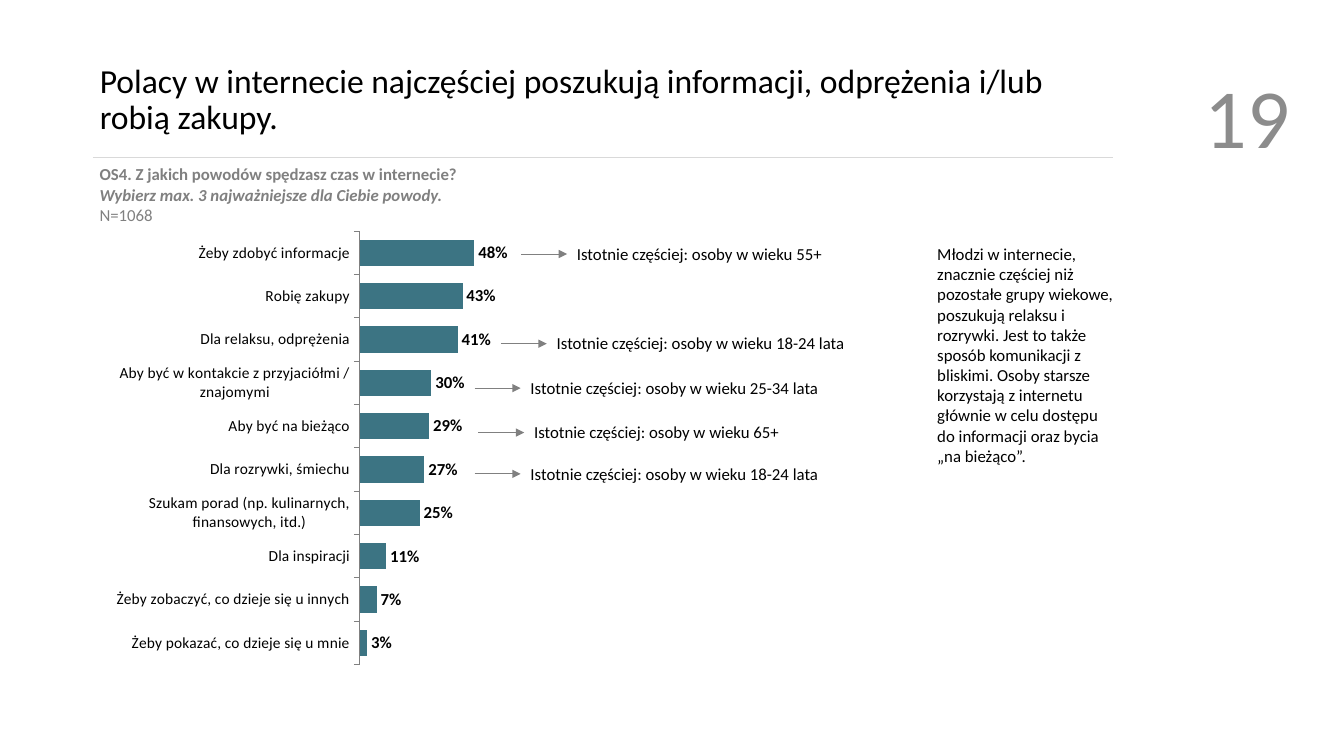
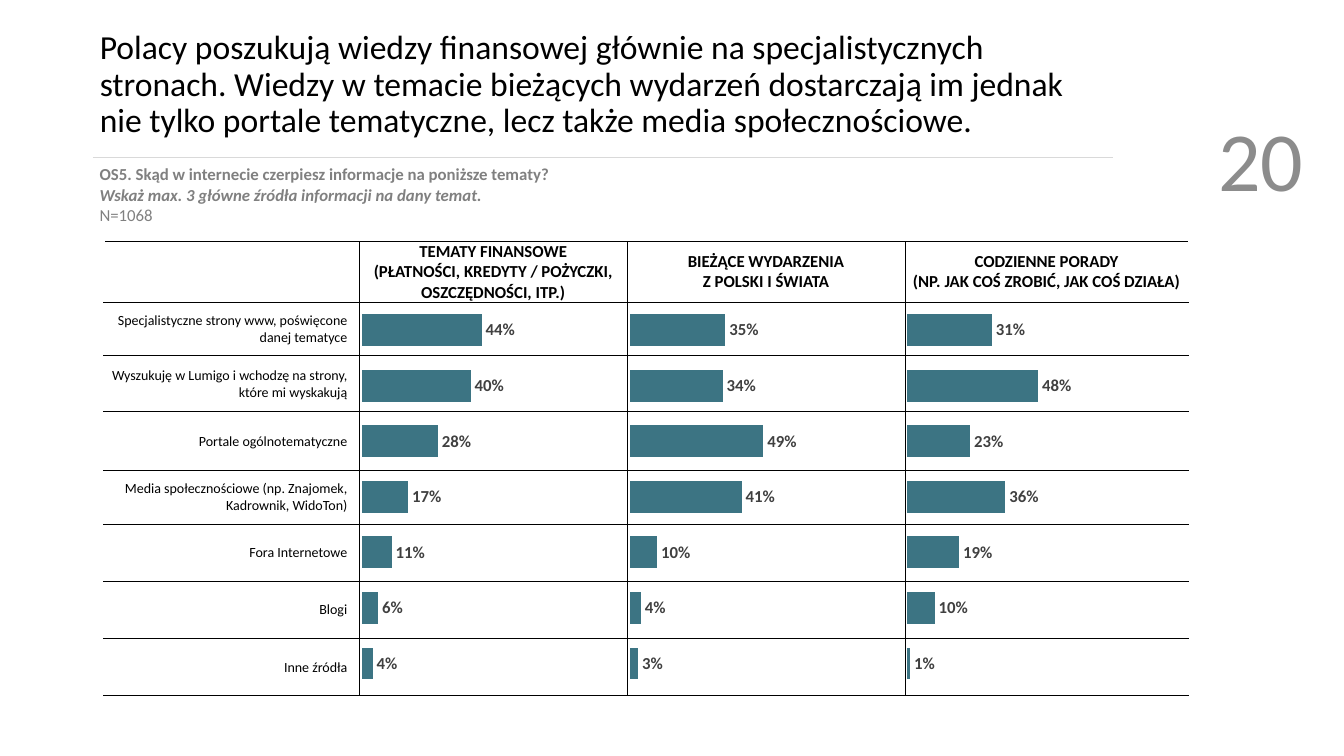
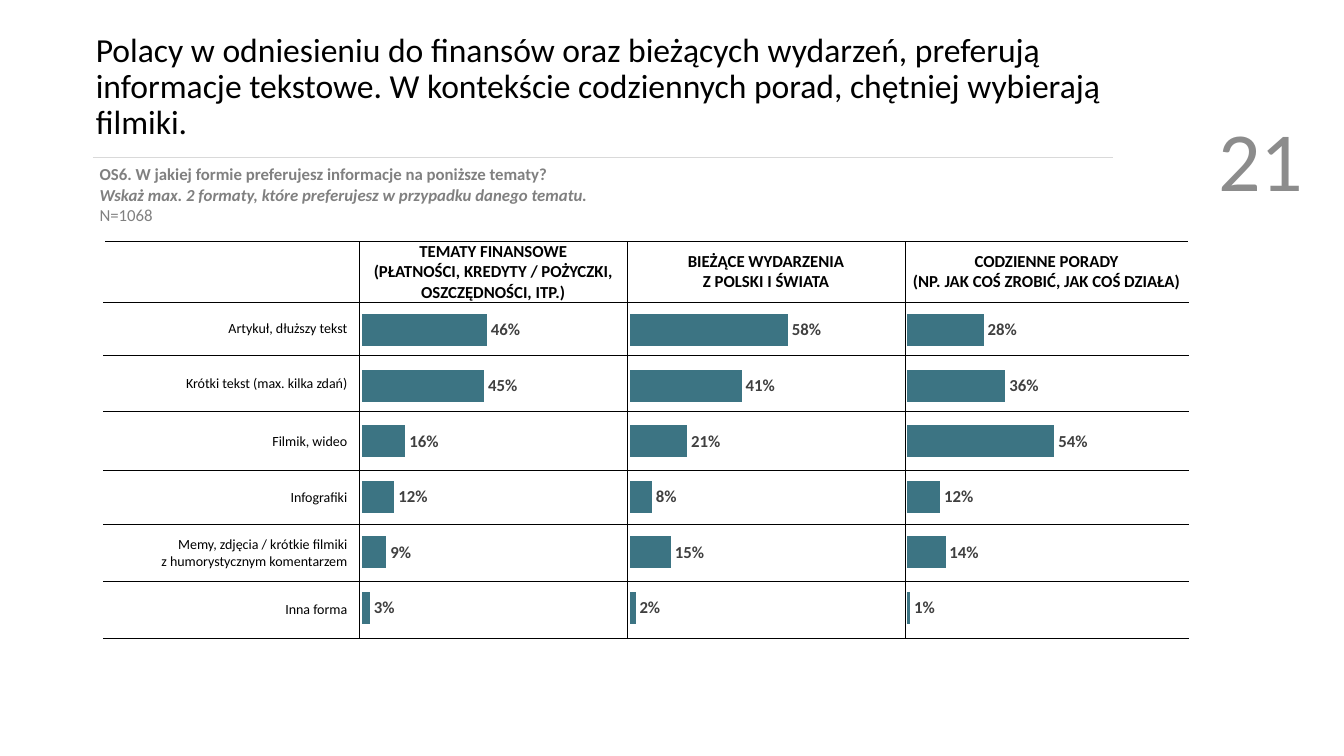
from itertools import accumulate

from pptx import Presentation
from pptx.chart.data import CategoryChartData
from pptx.dml.color import RGBColor
from pptx.enum.chart import XL_CHART_TYPE, XL_LABEL_POSITION, XL_TICK_MARK
from pptx.enum.shapes import MSO_CONNECTOR, MSO_SHAPE
from pptx.enum.text import MSO_ANCHOR, MSO_AUTO_SIZE, PP_ALIGN
from pptx.oxml import parse_xml
from pptx.oxml.ns import nsdecls
from pptx.util import Cm, Pt

FONT = "Calibri"
COLORS = {
    "text": "000000",
    "muted": "808080",
    "number": "8C8C8C",
    "rule": "D9D9D9",
    "bar": "3C7483",
    "label": "404040",
    "white": "FFFFFF",
}
COLUMN_WIDTHS = [6.43, 6.76, 6.99, 7.15]
ROW_HEIGHTS = [1.53, 1.34, 1.42, 1.47, 1.36, 1.44, 1.44, 1.44]
TABLE_LEFT, TABLE_TOP = 2.62, 6.08
CHART_ROW = 1.4
TOPICS = [
    "TEMATY FINANSOWE\n(PŁATNOŚCI, KREDYTY / POŻYCZKI, OSZCZĘDNOŚCI, ITP.)",
    "BIEŻĄCE WYDARZENIA\nZ POLSKI I ŚWIATA",
    "CODZIENNE PORADY\n(NP. JAK COŚ ZROBIĆ, JAK COŚ DZIAŁA)",
]
REASONS = {
    "Żeby zdobyć informacje": 0.48,
    "Robię zakupy": 0.43,
    "Dla relaksu, odprężenia": 0.41,
    "Aby być w kontakcie z przyjaciółmi / znajomymi": 0.3,
    "Aby być na bieżąco": 0.29,
    "Dla rozrywki, śmiechu": 0.27,
    "Szukam porad (np. kulinarnych, finansowych, itd.)": 0.25,
    "Dla inspiracji": 0.11,
    "Żeby zobaczyć, co dzieje się u innych": 0.07,
    "Żeby pokazać, co dzieje się u mnie": 0.03,
}
AGE_NOTES = [
    (13.13, 6.4, "55+"),
    (12.62, 8.66, "18-24 lata"),
    (11.96, 9.78, "25-34 lata"),
    (12.05, 10.9, "65+"),
    (11.96, 11.94, "18-24 lata"),
]
COMMENT = (
    "Młodzi w internecie, znacznie częściej niż pozostałe grupy wiekowe, poszukują "
    "relaksu i rozrywki. Jest to także sposób komunikacji z bliskimi. Osoby starsze "
    "korzystają z internetu głównie w celu dostępu do informacji oraz bycia „na bieżąco”."
)
SOURCES = {
    "Specjalistyczne strony www, poświęcone danej tematyce": (0.44, 0.35, 0.31),
    "Wyszukuję w Lumigo i wchodzę na strony, które mi wyskakują": (0.4, 0.34, 0.48),
    "Portale ogólnotematyczne": (0.28, 0.49, 0.23),
    "Media społecznościowe (np. Znajomek, Kadrownik, WidoTon)": (0.17, 0.41, 0.36),
    "Fora Internetowe": (0.11, 0.1, 0.19),
    "Blogi": (0.06, 0.04, 0.1),
    "Inne źródła": (0.04, 0.03, 0.01),
}
FORMATS = {
    "Artykuł, dłuższy tekst": (0.46, 0.58, 0.28),
    "Krótki tekst (max. kilka zdań)": (0.45, 0.41, 0.36),
    "Filmik, wideo": (0.16, 0.21, 0.54),
    "Infografiki": (0.12, 0.08, 0.12),
    "Memy, zdjęcia / krótkie filmiki\nz humorystycznym komentarzem": (0.09, 0.15, 0.14),
    "Inna forma": (0.03, 0.02, 0.01),
}


def color(name):
    return RGBColor.from_string(COLORS[name])


def cm_box(box):
    return [Cm(length) for length in box]


def write(frame, text, size=12, ink="text", bold=False, italic=False, styles=(),
          align=PP_ALIGN.LEFT, spacing=None):
    para = frame.paragraphs[0]
    para.alignment = align
    para.line_spacing = spacing
    for index, line in enumerate(text.split("\n")):
        if index:
            para.add_line_break()
        span = para.add_run()
        span.text = line
        font = span.font
        font.name, font.size = FONT, Pt(size)
        font.color.rgb = color(ink)
        font.bold, font.italic = styles[index] if styles else (bold, italic)


def add_text(page, box, text, anchor=MSO_ANCHOR.TOP, **formats):
    frame = page.shapes.add_textbox(*cm_box(box)).text_frame
    frame.word_wrap = True
    frame.vertical_anchor = anchor
    write(frame, text, **formats)


def add_line(page, start, end, ink, width, arrow=False):
    line = page.shapes.add_connector(
        MSO_CONNECTOR.STRAIGHT, *cm_box(start), *cm_box(end))
    line.line.color.rgb = color(ink)
    line.line.width = Pt(width)
    if arrow:
        line.line._get_or_add_ln().append(
            parse_xml(f'<a:tailEnd {nsdecls("a")} type="triangle"/>'))
    line._element.spPr.append(parse_xml(f'<a:effectLst {nsdecls("a")}/>'))


def add_page(deck, title, title_box, number, number_box, question):
    page = deck.slides.add_slide(deck.slide_layouts[5])
    add_line(page, (2.34, 3.97), (28.04, 3.97), "rule", 0.75)
    heading = page.shapes.title
    heading.left, heading.top, heading.width, heading.height = cm_box(title_box)
    frame = heading.text_frame
    frame.auto_size = MSO_AUTO_SIZE.NONE
    frame.word_wrap = True
    frame.vertical_anchor = MSO_ANCHOR.MIDDLE
    write(frame, title, size=24, spacing=0.9)
    add_text(page, number_box, number, MSO_ANCHOR.MIDDLE,
             size=60, ink="number", align=PP_ALIGN.RIGHT)
    add_text(page, (2.26, 4.01, 23.27, 1.8), question + "\nN=1068", ink="muted",
             styles=[(True, False), (True, True), (False, False)])
    return page


def add_bars(page, box, categories, values, gap, plot, label_ink, show_categories):
    data = CategoryChartData(number_format="0%")
    data.categories = categories
    data.add_series("Series 1", values)
    chart = page.shapes.add_chart(
        XL_CHART_TYPE.BAR_CLUSTERED, *cm_box(box), data).chart
    chart.has_legend = False
    chart.has_title = False
    chart.font.name, chart.font.size = FONT, Pt(10)
    chart.font.color.rgb = color("text")

    axis = chart.category_axis
    axis.reverse_order = True
    axis.visible = show_categories
    axis.has_major_gridlines = False
    if show_categories:
        axis.major_tick_mark = XL_TICK_MARK.OUTSIDE
        axis.format.line.color.rgb = color("muted")
        axis.tick_labels.font.size = Pt(11)
        axis.tick_labels.font.name = FONT
    scale = chart.value_axis
    scale.visible = False
    scale.has_major_gridlines = False
    scale.minimum_scale, scale.maximum_scale = 0, 1

    bars = chart.plots[0]
    bars.gap_width = gap
    bars.vary_by_categories = False
    fill = bars.series[0].format.fill
    fill.solid()
    fill.fore_color.rgb = color("bar")
    bars.has_data_labels = True
    labels = bars.data_labels
    labels.show_value = True
    labels.position = XL_LABEL_POSITION.OUTSIDE_END
    labels.number_format, labels.number_format_is_linked = "0%", False
    labels.font.name, labels.font.size, labels.font.bold = FONT, Pt(12), True
    labels.font.color.rgb = color(label_ink)

    area = chart._chartSpace.chart.plotArea
    for layout in area.findall("{*}layout"):
        area.remove(layout)
    modes = '<c:xMode val="edge"/><c:yMode val="edge"/>'
    extents = "".join(f'<c:{key} val="{value}"/>' for key, value in zip("xywh", plot))
    area.insert(0, parse_xml(
        f'<c:layout {nsdecls("c")}><c:manualLayout><c:layoutTarget val="inner"/>'
        f'{modes}{extents}</c:manualLayout></c:layout>'))


def format_cell(cell, sides, margins):
    properties = cell._tc.get_or_add_tcPr()
    for side in sides:
        properties.append(parse_xml(
            f'<a:ln{side} {nsdecls("a")} w="3175"><a:solidFill>'
            f'<a:srgbClr val="{COLORS["text"]}"/></a:solidFill></a:ln{side}>'))
    cell.fill.solid()
    cell.fill.fore_color.rgb = color("white")
    cell.vertical_anchor = MSO_ANCHOR.MIDDLE
    (cell.margin_left, cell.margin_top,
     cell.margin_right, cell.margin_bottom) = cm_box(margins)


def add_grid(page, left, top, labels):
    heights = ROW_HEIGHTS[:len(labels) + 1]
    box = (left, top, sum(COLUMN_WIDTHS), sum(heights))
    table = page.shapes.add_table(
        len(heights), len(COLUMN_WIDTHS), *cm_box(box)).table
    table.first_row = table.horz_banding = False
    for column, width in zip(table.columns, COLUMN_WIDTHS):
        column.width = Cm(width)
    for row, height in zip(table.rows, heights):
        row.height = Cm(height)
    last = len(COLUMN_WIDTHS) - 1
    for y in range(len(heights)):
        for x in range(last + 1):
            sides = ["L"] * (x > 0) + ["R"] * (x < last) + ["T", "B"]
            margins = (0.13, 0, 0.13, 0) if x else (0.03, 0.03, 0.3, 0)
            format_cell(table.cell(y, x), sides, margins)
    for x, topic in enumerate(TOPICS, 1):
        write(table.cell(0, x).text_frame, topic, bold=True, align=PP_ALIGN.CENTER)
    for y, label in enumerate(labels, 1):
        write(table.cell(y, 0).text_frame, label, size=10, align=PP_ALIGN.RIGHT)


def add_topic_table(page, left, top, answers):
    add_grid(page, left, top, list(answers))
    numbers = [str(index + 1) for index in range(len(answers))]
    column_lefts = accumulate(COLUMN_WIDTHS[:-1], initial=left)
    next(column_lefts)
    for column_left, values in zip(column_lefts, zip(*answers.values())):
        box = (column_left - 0.16, top + 1.54, 7.62, CHART_ROW * len(answers))
        add_bars(page, box, numbers, values, 75, (0.03, 0, 0.9, 1), "label", False)


def add_age_note(page, left, middle, age):
    end = left + 1.16
    add_line(page, (left, middle), (end, middle), "muted", 0.5, arrow=True)
    add_text(page, (end, middle - 0.39, 7.87, 0.77),
             f"Istotnie częściej: osoby w wieku {age}")


def add_comment(page, box):
    panel = page.shapes.add_shape(MSO_SHAPE.RECTANGLE, *cm_box(box))
    panel.shadow.inherit = False
    panel.fill.solid()
    panel.fill.fore_color.rgb = color("white")
    panel.line.fill.background()
    panel.text_frame.word_wrap = True
    panel.text_frame.vertical_anchor = MSO_ANCHOR.TOP
    write(panel.text_frame, COMMENT)


def reasons_page(deck):
    page = add_page(
        deck,
        "Polacy w internecie najczęściej poszukują informacji, odprężenia i/lub robią zakupy.",
        (2.26, 1.14, 25.68, 2.79), "19", (28.75, 1.09, 4.01, 3.61),
        "OS4. Z jakich powodów spędzasz czas w internecie?\n"
        "Wybierz max. 3 najważniejsze dla Ciebie powody.")
    add_bars(page, (2.26, 5.79, 13.49, 11.56), list(REASONS), list(REASONS.values()),
             66, (0.505, 0.003, 0.446, 0.945), "text", True)
    for note in AGE_NOTES:
        add_age_note(page, *note)
    add_comment(page, (23.37, 6.02, 5.0, 5.89))


def topics_page(deck, title, title_box, number, question, answers):
    page = add_page(deck, title, title_box, number, (29.92, 3.45, 3.18, 1.07), question)
    add_topic_table(page, TABLE_LEFT, TABLE_TOP, answers)


def main():
    deck = Presentation()
    deck.slide_width, deck.slide_height = Cm(33.87), Cm(19.05)
    reasons_page(deck)
    topics_page(
        deck,
        "Polacy poszukują wiedzy finansowej głównie na specjalistycznych stronach. "
        "Wiedzy w temacie bieżących wydarzeń dostarczają im jednak nie tylko portale "
        "tematyczne, lecz także media społecznościowe.",
        (2.26, 0.28, 25.88, 3.73), "20",
        "OS5. Skąd w internecie czerpiesz informacje na poniższe tematy?\n"
        "Wskaż max. 3 główne źródła informacji na dany temat.", SOURCES)
    topics_page(
        deck,
        "Polacy w odniesieniu do finansów oraz bieżących wydarzeń, preferują "
        "informacje tekstowe. W kontekście codziennych porad, chętniej wybierają filmiki.",
        (2.16, 0.38, 25.88, 3.66), "21",
        "OS6. W jakiej formie preferujesz informacje na poniższe tematy?\n"
        "Wskaż max. 2 formaty, które preferujesz w przypadku danego tematu.", FORMATS)
    deck.save("out.pptx")


if __name__ == "__main__":
    main()
